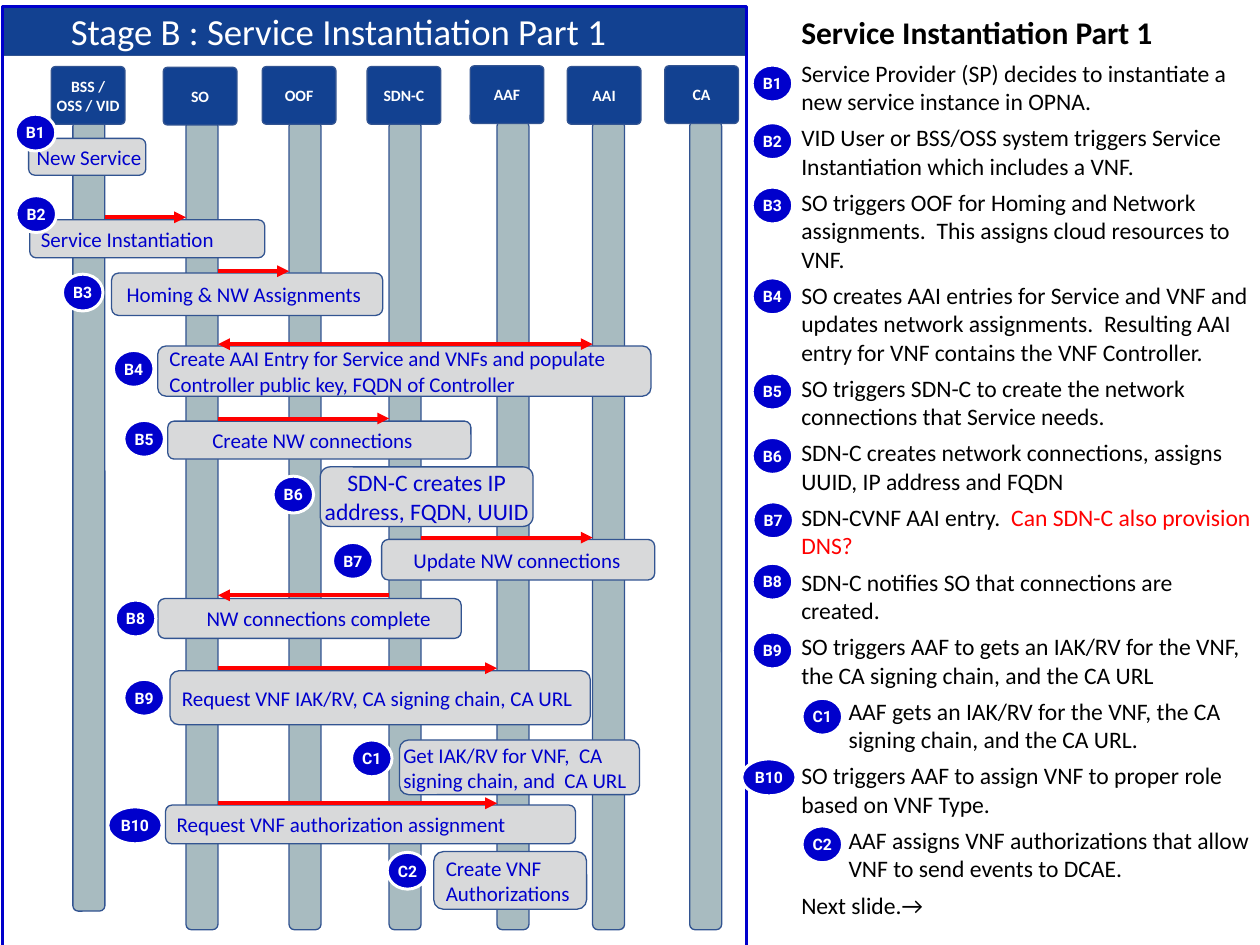
from lxml.etree import SubElement
from pptx import Presentation
from pptx.dml.color import RGBColor
from pptx.enum.shapes import MSO_CONNECTOR, MSO_SHAPE
from pptx.enum.text import MSO_ANCHOR, PP_ALIGN
from pptx.oxml.ns import qn
from pptx.util import Cm, Pt

NAVY, EDGE, LANE, BOX = "124191", "325491", "A8BBC0", "D8D9DA"
BLUE, RED, WHITE, BLACK = "0000CC", "FF0000", "FFFFFF", "000000"
LANE_WIDTH, LANE_TOP, LANE_BOTTOM = 0.86, 3.25, 24.99
BADGE_WIDTH, WIDE_BADGE_WIDTH, BADGE_HEIGHT = 1.09, 1.46, 0.99

TITLE = "Stage B : Service Instantiation Part 1"

# name: (lane left, header left, header top), in cm
LANES = {
    "BSS /\vOSS / VID": (1.96, 1.38, 1.79),
    "SO": (5.0, 4.39, 1.81),
    "OOF": (7.77, 7.05, 1.79),
    "SDN-C": (10.46, 9.87, 1.79),
    "AAF": (13.36, 12.64, 1.77),
    "AAI": (15.93, 15.25, 1.79),
    "CA": (18.54, 17.87, 1.77),
}

# label, badge (left, top), box (left, top, width, height), text, left inset
STEPS = [
    ("B1", (0.41, 3.07), (0.77, 3.72, 3.15, 0.99), "New Service", 0.17),
    ("B2", (0.43, 5.26), (0.8, 5.91, 6.32, 1.02), "Service Instantiation", 0.25),
    ("B3", (1.68, 7.37), (3.0, 7.34, 7.29, 1.14), "Homing & NW Assignments", 0.35),
    ("B4", (3.05, 9.42), (4.24, 9.3, 13.26, 1.35),
     "Create AAI Entry for Service and VNFs and populate Controller public key, "
     "FQDN of Controller", 0.25),
    ("B5", (3.33, 11.3), (4.51, 11.32, 8.15, 1.02), "Create NW connections", 1.15),
    ("B6", (7.34, 12.8), (8.61, 12.55, 5.72, 1.6),
     "SDN-C creates IP address, FQDN, UUID", 0.03),
    ("B7", (8.94, 14.58), (10.26, 14.5, 7.34, 1.09), "Update NW connections", 0.8),
    ("B8", (3.1, 16.13), (4.25, 16.09, 8.15, 1.07), "NW connections complete", 1.25),
    ("B9", (3.33, 18.26), (4.57, 18.03, 11.3, 1.45),
     "Request VNF IAK/RV, CA signing chain, CA URL", 0.25),
    ("C1", (9.45, 19.89), (10.74, 19.89, 6.45, 1.47),
     "Get IAK/RV for VNF,  CA signing chain, and  CA URL", 0.03),
    ("B10", (2.9, 21.69), (4.45, 21.64, 11.02, 1.04),
     "Request VNF authorization assignment", 0.25),
    ("C2", (10.41, 22.91), (11.66, 22.89, 4.11, 1.55), "Create VNF Authorizations", 0.25),
]
CENTRED_STEP = "B6"

# from lane, to lane, height on the slide, arrowheads at both ends
ARROWS = [
    ("BSS /\vOSS / VID", "SO", 5.84, False),
    ("SO", "OOF", 7.29, False),
    ("SO", "AAI", 9.25, True),
    ("SO", "SDN-C", 11.25, False),
    ("SDN-C", "AAI", 14.45, False),
    ("SDN-C", "SO", 16.0, False),
    ("SO", "AAF", 17.96, False),
    ("SO", "AAF", 21.59, False),
]

LEGEND_TITLE = "Service Instantiation Part 1"
LEGEND_END = "Next slide.→"
# label, badge (left, top), text, question in red
LEGEND = [
    ("B1", (20.22, 1.75),
     "Service Provider (SP) decides to instantiate a new service instance in OPNA.", ""),
    ("B2", (20.22, 3.3),
     "VID User or BSS/OSS system triggers Service Instantiation which includes a VNF.", ""),
    ("B3", (20.22, 5.03),
     "SO triggers OOF for Homing and Network assignments.  "
     "This assigns cloud resources to VNF.", ""),
    ("B4", (20.22, 7.47),
     "SO creates AAI entries for Service and VNF and updates network assignments.  "
     "Resulting AAI entry for VNF contains the VNF Controller.", ""),
    ("B5", (20.22, 10.03),
     "SO triggers SDN-C to create the network connections that Service needs.", ""),
    ("B6", (20.22, 11.76),
     "SDN-C creates network connections, assigns UUID, IP address and FQDN", ""),
    ("B7", (20.24, 13.49), "SDN-CVNF AAI entry.  ", "Can SDN-C also provision DNS?"),
    ("B8", (20.22, 15.14), "SDN-C notifies SO that connections are created.", ""),
    ("B9", (20.22, 16.99),
     "SO triggers AAF to gets an IAK/RV for the VNF, the CA signing chain, and the CA URL", ""),
    ("C1", (21.56, 18.77),
     "AAF gets an IAK/RV for the VNF, the CA signing chain, and the CA URL.", ""),
    ("B10", (19.94, 20.4), "SO triggers AAF to assign VNF to proper role based on VNF Type.", ""),
    ("C2", (21.56, 22.2),
     "AAF assigns VNF authorizations that allow VNF to send events to DCAE.", ""),
]


def color(hex_string):
    return RGBColor.from_string(hex_string)


def set_font(font, size, hex_string, bold=False, name="Calibri"):
    font.name, font.size, font.bold = name, Pt(size), bold
    font.color.rgb = color(hex_string)


def set_insets(frame, left, top, right, bottom):
    frame.margin_left, frame.margin_top = Cm(left), Cm(top)
    frame.margin_right, frame.margin_bottom = Cm(right), Cm(bottom)


def add_shape(kind, place, fill, line=EDGE, line_width=1, corner=None):
    shape = slide.shapes.add_shape(kind, *map(Cm, place))
    shape.shadow.inherit = False
    if fill:
        shape.fill.solid()
        shape.fill.fore_color.rgb = color(fill)
    else:
        shape.fill.background()
    shape.line.color.rgb = color(line)
    shape.line.width = Pt(line_width)
    if corner is not None:
        shape.adjustments[0] = corner
    return shape


def write(shape, text, size, hex_string, bold=False, name="Calibri",
          align=PP_ALIGN.CENTER, insets=(0, 0, 0, 0)):
    frame = shape.text_frame
    frame.word_wrap = True
    frame.vertical_anchor = MSO_ANCHOR.MIDDLE
    set_insets(frame, *insets)
    paragraph = frame.paragraphs[0]
    paragraph.text = text
    paragraph.alignment = align
    set_font(paragraph.font, size, hex_string, bold, name)


def add_badge(label, left, top):
    width = WIDE_BADGE_WIDTH if len(label) > 2 else BADGE_WIDTH
    badge = add_shape(MSO_SHAPE.OVAL, (left, top, width, BADGE_HEIGHT), BLUE, WHITE, 2.25)
    write(badge, label, 12, WHITE, True, "Roboto", insets=(0.1, 0.1, 0.1, 0.1))


def add_arrow(source, target, top, both_ends):
    """Join the facing edges of two lanes."""
    start, end = LANES[source][0], LANES[target][0]
    if start < end:
        start += LANE_WIDTH
    else:
        end += LANE_WIDTH
    arrow = slide.shapes.add_connector(MSO_CONNECTOR.STRAIGHT, Cm(start), Cm(top), Cm(end), Cm(top))
    arrow.line.color.rgb = color(RED)
    arrow.line.width = Pt(3)
    line = arrow.line._get_or_add_ln()
    for tag in ("a:headEnd", "a:tailEnd") if both_ends else ("a:tailEnd",):
        SubElement(line, qn(tag)).set("type", "triangle")
    SubElement(arrow._element.spPr, qn("a:effectLst"))


def add_legend():
    frame = slide.shapes.add_textbox(Cm(21.34), Cm(0.15), Cm(12.55), Cm(24.99)).text_frame
    frame.word_wrap = True
    set_insets(frame, 0.2, 0.2, 0.2, 0.2)
    heading = frame.paragraphs[0]
    heading.text = LEGEND_TITLE
    heading.space_after = Pt(6)
    set_font(heading.font, 24, BLACK, True)
    for label, _, text, question in LEGEND + [("", None, LEGEND_END, "")]:
        paragraph = frame.add_paragraph()
        paragraph.space_after = Pt(6)
        set_font(paragraph.font, 18, BLACK)
        paragraph.add_run().text = text
        if question:
            run = paragraph.add_run()
            run.text = question
            run.font.color.rgb = color(RED)
        if label.startswith("C"):
            paragraph.level = 1
            properties = paragraph._p.get_or_add_pPr()
            properties.set("marL", str(Cm(1.27)))
            properties.set("indent", "0")


presentation = Presentation()
presentation.slide_width, presentation.slide_height = Cm(33.87), Cm(25.4)
slide = presentation.slides.add_slide(presentation.slide_layouts[6])

title_bar = add_shape(MSO_SHAPE.RECTANGLE, (0.08, 0.18, 19.99, 1.32), NAVY)
write(title_bar, TITLE, 28, WHITE, insets=(0, 0, 1.96, 0))
add_shape(MSO_SHAPE.RECTANGLE, (0.08, 0.18, 19.99, 25.37), None, BLUE, 2.25)

for number, (name, (lane_left, header_left, header_top)) in enumerate(LANES.items()):
    bottom = LANE_BOTTOM if number else 24.49
    add_shape(MSO_SHAPE.ROUNDED_RECTANGLE,
              (lane_left, LANE_TOP, LANE_WIDTH, bottom - LANE_TOP), LANE)
    header = add_shape(MSO_SHAPE.ROUNDED_RECTANGLE,
                       (header_left, header_top, 1.98, 1.55), NAVY, corner=0.07)
    write(header, name, 12, WHITE, True)

for label, badge_place, box_place, text, inset in STEPS:
    box = add_shape(MSO_SHAPE.ROUNDED_RECTANGLE, box_place, BOX)
    centred = label == CENTRED_STEP
    write(box, text, 18 if centred else 16, BLUE,
          align=PP_ALIGN.CENTER if centred else PP_ALIGN.LEFT, insets=(inset, 0.13, 0.03, 0.13))
    add_badge(label, *badge_place)

for arrow_row in ARROWS:
    add_arrow(*arrow_row)

add_legend()
for label, badge_place, _, _ in LEGEND:
    add_badge(label, *badge_place)

presentation.save("out.pptx")
